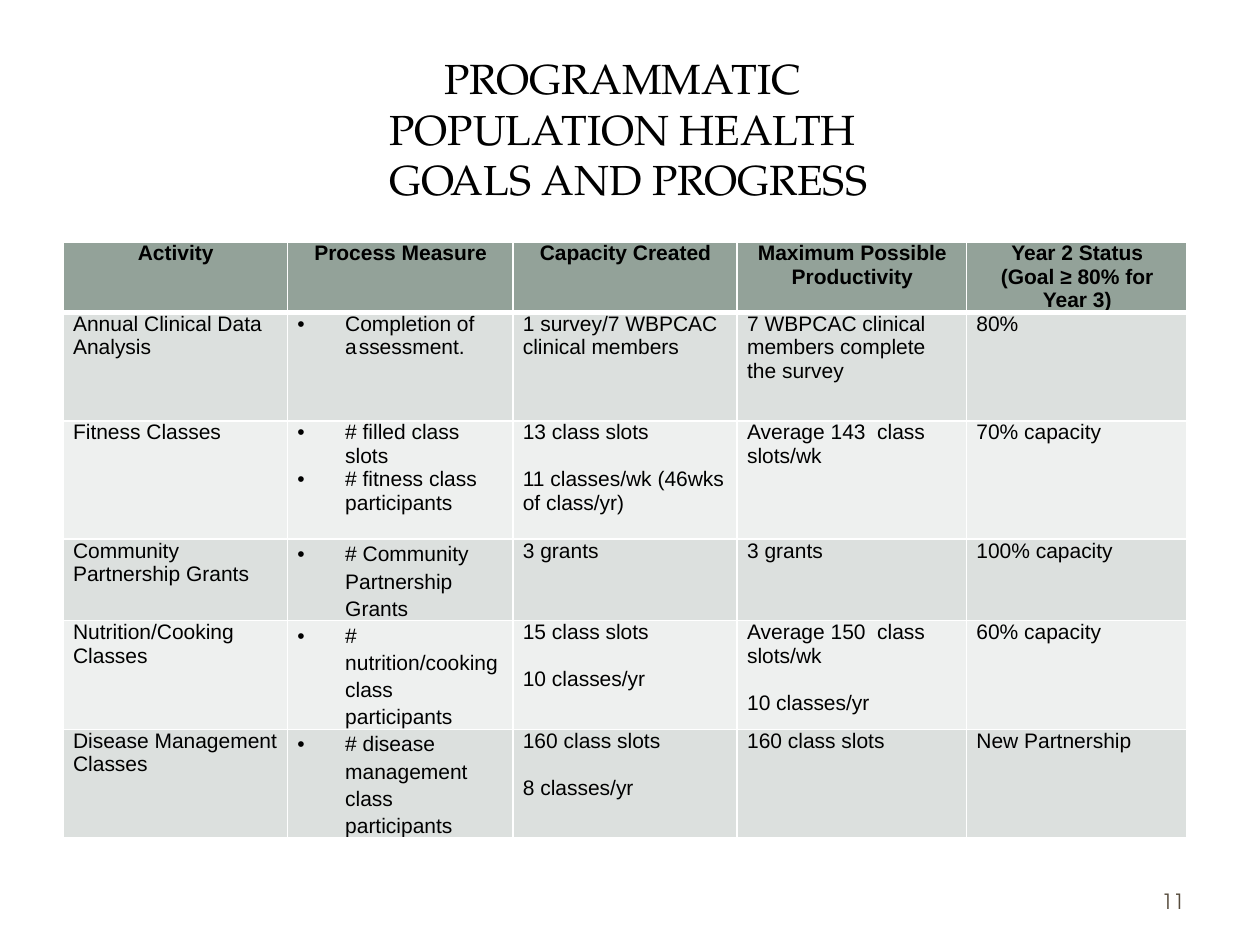
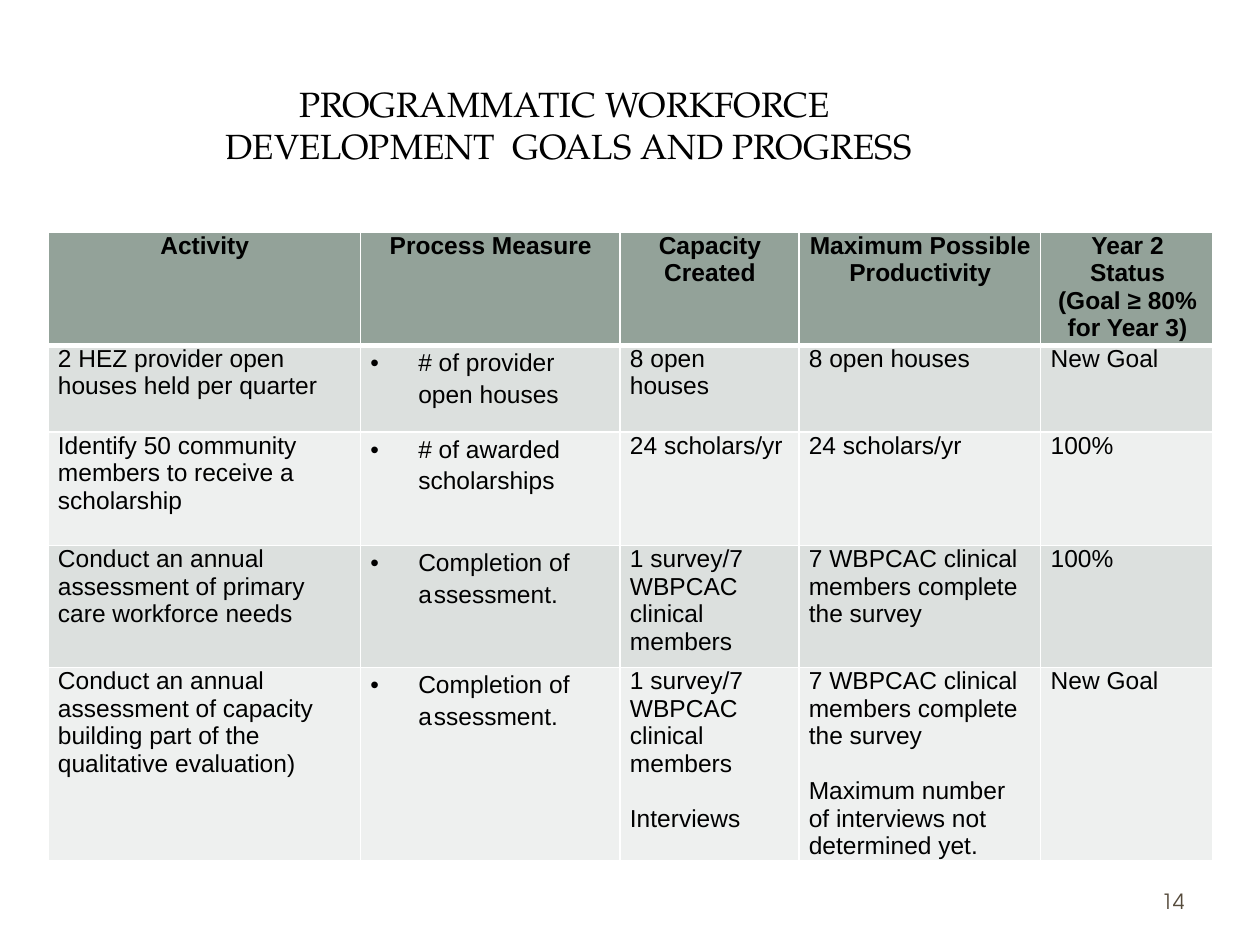
from dataclasses import dataclass
from typing import Any

from lxml.etree import SubElement
from pptx import Presentation
from pptx.dml.color import RGBColor
from pptx.enum.shapes import MSO_SHAPE
from pptx.enum.text import MSO_ANCHOR, PP_ALIGN
from pptx.oxml.ns import qn
from pptx.util import Inches, Pt

INK, GREY, WHITE = "000000", "564B3C", "FFFFFF"
HEAD, BANDS = "93A299", ("EEF0EF", "DCE0DE")
BODY, SERIF, SANS = "Arial", "TeX Gyre Pagella", "TeX Gyre Adventor"
INDENT = Inches(0.38)
LEAD, LOOSE = 1.12, 1.15  # line height per point of type, and its wide factor
MARGINS = {
    "margin_left": Inches(0.08),
    "margin_right": Inches(0.07),
    "margin_top": 0,
    "margin_bottom": 0,
}
MEASURE = 1  # column whose paragraphs carry bullets

# Bars part the runs; the middle run is widely spaced
DONE = "Completion of |a|ssessment."
SURVEY = "1 survey/7 WBPCAC clinical members"
ANSWER = "7 WBPCAC clinical members complete the survey"
HEADS = (
    "Activity",
    "Process Measure",
    "Capacity Created",
    "Maximum Possible Productivity",
    "Year 2 Status\n(Goal ≥ 80% for Year 3)",
)


@dataclass(frozen=True)
class Box:
    left: float
    top: float
    width: float
    height: float

    def emu(self) -> list[int]:
        return [Inches(v) for v in (self.left, self.top, self.width, self.height)]


@dataclass(frozen=True)
class Panel:
    box: Box
    kind: MSO_SHAPE = MSO_SHAPE.RECTANGLE
    alpha: int = 100


@dataclass(frozen=True)
class Goals:
    title: str
    place: Box
    points: int
    number: str
    left: float
    top: float
    size: int
    widths: tuple[float, ...]
    heights: tuple[float, ...]
    loose: int  # first row whose bullets have wide line spacing
    rows: tuple[tuple[str, ...], ...]


PANELS = (
    Panel(Box(0.1, 0.11, 9.8, 7.29), MSO_SHAPE.ROUNDED_RECTANGLE),
    Panel(Box(0.3, 0.3, 9.4, 1.45), alpha=83),
    Panel(Box(0.41, 0.41, 9.17, 1.22)),
)
PAGES = (
    Goals(
        title="PROGRAMMATIC \vPOPULATION HEALTH \vGOALS AND PROGRESS",
        place=Box(0.47, 0.45, 9.03, 1.14),
        points=24,
        number="11",
        left=0.5,
        top=1.92,
        size=12,
        widths=(1.78, 1.79, 1.78, 1.82, 1.75),
        heights=(0.56, 0.86, 0.94, 0.64, 0.86, 0.86),
        loose=3,
        rows=(
            ("Annual Clinical Data Analysis", DONE, SURVEY, ANSWER, "80%"),
            (
                "Fitness Classes",
                "# filled class slots\n# fitness class participants",
                "13 class slots\n11 classes/wk (46wks of class/yr)",
                "Average 143  class slots/wk",
                "70% capacity",
            ),
            (
                "Community Partnership Grants",
                "# Community Partnership Grants",
                "3 grants",
                "3 grants",
                "100% capacity",
            ),
            (
                "Nutrition/Cooking Classes",
                "# nutrition/cooking class participants",
                "15 class slots\n10 classes/yr",
                "Average 150  class slots/wk\n10 classes/yr",
                "60% capacity",
            ),
            (
                "Disease Management Classes",
                "# disease management class participants",
                "160 class slots\n8 classes/yr",
                "160 class slots",
                "New Partnership",
            ),
        ),
    ),
    Goals(
        title="PROGRAMMATIC WORKFORCE \vDEVELOPMENT  GOALS AND PROGRESS",
        place=Box(0, 0.42, 9.03, 1.14),
        points=20,
        number="14",
        left=0.38,
        top=1.84,
        size=14,
        widths=(2.48, 2.06, 1.42, 1.92, 1.37),
        heights=(0.9, 0.69, 0.9, 0.97, 1.53),
        loose=1,
        rows=(
            (
                "2 HEZ provider open houses held per quarter",
                "# of provider open houses",
                "8 open houses",
                "8 open houses",
                "New Goal",
            ),
            (
                "Identify 50 community members to receive a scholarship",
                "# of awarded scholarships",
                "24 scholars/yr",
                "24 scholars/yr",
                "100%",
            ),
            (
                "Conduct an annual assessment of primary care workforce needs",
                DONE,
                SURVEY,
                ANSWER,
                "100%",
            ),
            (
                "Conduct an annual assessment of capacity building part of the "
                "qualitative evaluation)",
                DONE,
                SURVEY + "\nInterviews",
                ANSWER + "\nMaximum number of interviews not determined yet.",
                "New Goal",
            ),
        ),
    ),
)


def color(code: str) -> RGBColor:
    return RGBColor.from_string(code)


def apply(item: Any, values: dict[str, Any]) -> None:
    for name, value in values.items():
        setattr(item, name, value)


def style(font: Any, name: str, size: int, ink: str, bold: bool = False) -> None:
    apply(font, {"name": name, "size": Pt(size), "bold": bold})
    font.color.rgb = color(ink)


def draw(slide: Any, panel: Panel) -> None:
    shape = slide.shapes.add_shape(panel.kind, *panel.box.emu())
    shape.shadow.inherit = False
    shape.fill.solid()
    shape.fill.fore_color.rgb = color(WHITE)
    shape.line.fill.background()
    if panel.kind == MSO_SHAPE.ROUNDED_RECTANGLE:
        shape.adjustments[0] = 0.02
    if panel.alpha < 100:
        tint = shape._element.spPr.find(qn("a:solidFill"))[0]
        SubElement(tint, qn("a:alpha"), val=str(panel.alpha * 1000))


def label(slide: Any, box: Box, text: str, name: str, size: int, ink: str,
          align: PP_ALIGN) -> None:
    frame = slide.shapes.add_textbox(*box.emu()).text_frame
    apply(frame, {"word_wrap": True, "vertical_anchor": MSO_ANCHOR.MIDDLE})
    para = frame.paragraphs[0]
    para.text = text
    para.alignment = align
    for run in para.runs:
        style(run.font, name, size, ink)


def bullet(para: Any) -> None:
    props = para._p.get_or_add_pPr()
    props.set("marL", str(INDENT))
    props.set("indent", str(-INDENT))
    SubElement(props, qn("a:buFont"), typeface=BODY)
    SubElement(props, qn("a:buChar"), char="•")


def border(cell: Any, row: int) -> None:
    """Rule the cell in white, thicker between header and body."""
    props = cell._tc.get_or_add_tcPr()
    thick = {0: "lnB", 1: "lnT"}.get(row)
    for spot, side in enumerate(("lnL", "lnR", "lnT", "lnB")):
        width = Pt(3 if side == thick else 1)
        line = SubElement(props, qn(f"a:{side}"), w=str(width))
        fill = SubElement(line, qn("a:solidFill"))
        SubElement(fill, qn("a:srgbClr"), val=WHITE)
        props.insert(spot, line)


def write(cell: Any, text: str, row: int, col: int, page: Goals) -> None:
    head, listed = row == 0, row > 0 and col == MEASURE
    lead = page.size * LEAD
    wide = LOOSE if listed and row >= page.loose else 1
    frame = cell.text_frame
    for order, line in enumerate(text.split("\n")):
        para = frame.add_paragraph() if order else frame.paragraphs[0]
        para.alignment = PP_ALIGN.CENTER if head else PP_ALIGN.LEFT
        para.line_spacing = Pt(round(lead * wide, 1))
        if order and not head and not listed:
            para.space_before = Pt(round(lead, 1))
        if listed:
            bullet(para)
        for part, words in enumerate(line.split("|")):
            run = para.add_run()
            run.text = words
            style(run.font, BODY, page.size, INK, head)
            if part == 1:
                run._r.get_or_add_rPr().set("spc", "110")


def grid(slide: Any, page: Goals) -> None:
    data = (HEADS, *page.rows)
    box = Box(page.left, page.top, sum(page.widths), sum(page.heights))
    table = slide.shapes.add_table(len(data), len(HEADS), *box.emu()).table
    for column, width in zip(table.columns, page.widths):
        column.width = Inches(width)
    for row, texts in enumerate(data):
        table.rows[row].height = Inches(page.heights[row])
        for col, text in enumerate(texts):
            cell = table.cell(row, col)
            apply(cell, MARGINS)
            cell.fill.solid()
            cell.fill.fore_color.rgb = color(BANDS[row % 2] if row else HEAD)
            border(cell, row)
            write(cell, text, row, col, page)


def main() -> None:
    deck = Presentation()
    apply(deck, {"slide_width": Inches(10), "slide_height": Inches(7.5)})
    for page in PAGES:
        slide = deck.slides.add_slide(deck.slide_layouts[6])
        for panel in PANELS:
            draw(slide, panel)
        label(slide, page.place, page.title, SERIF, page.points, INK,
              PP_ALIGN.CENTER)
        grid(slide, page)
        label(slide, Box(7.17, 6.95, 2.33, 0.4), page.number, SANS, 12, GREY,
              PP_ALIGN.RIGHT)
    deck.save("out.pptx")


if __name__ == "__main__":
    main()
